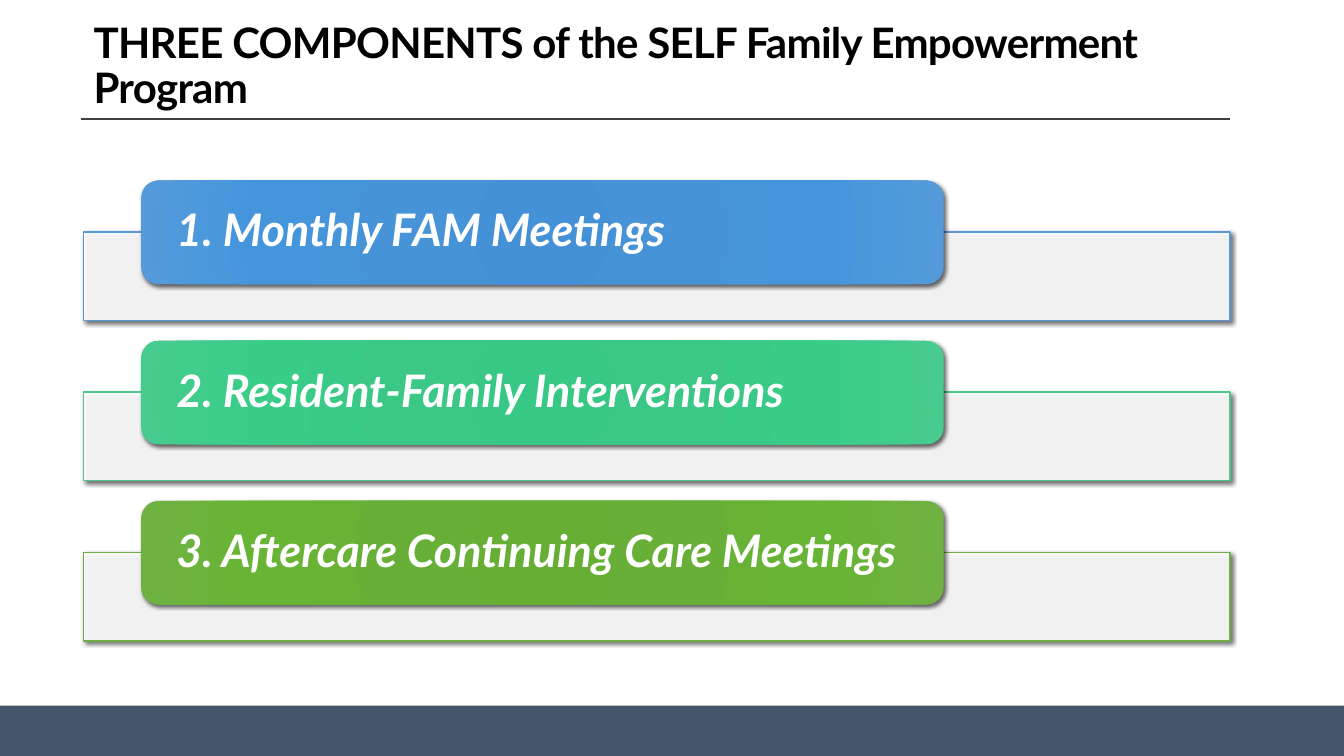
from lxml import etree
from pptx import Presentation
from pptx.dml.color import RGBColor
from pptx.enum.shapes import MSO_CONNECTOR, MSO_SHAPE
from pptx.enum.text import MSO_ANCHOR, PP_ALIGN
from pptx.oxml import parse_xml
from pptx.oxml.ns import qn
from pptx.util import Pt

RECTANGLE = MSO_SHAPE.RECTANGLE
ROUNDED = MSO_SHAPE.ROUNDED_RECTANGLE
STRAIGHT = MSO_CONNECTOR.STRAIGHT
LEFT = PP_ALIGN.LEFT
BOTTOM = MSO_ANCHOR.BOTTOM
MIDDLE = MSO_ANCHOR.MIDDLE
PX = 9144
DRAWING = "http://schemas.openxmlformats.org/drawingml/2006/main"
COLORS = {"black": "000000", "white": "FFFFFF", "rule": "404040", "footer": "44546A"}
COMPONENTS = [
    ("1. Monthly FAM Meetings", "5B9BD5", ["4491D8", "4793D7", "4595DD", "559BDB"]),
    ("2. Resident-Family Interventions", "4DC58D", ["37C885", "3BC786", "39CD88", "47CB8E"]),
    ("3. Aftercare Continuing Care Meetings", "70AD47", ["66AF34", "67AF37", "68B435", "6FB242"]),
]
STOPS = [0, 34, 70, 100]


def add_block(kind, left, top, width, height, fill, shadow=False):
    block = page.shapes.add_shape(kind, left * PX, top * PX, width * PX, height * PX)
    block.fill.solid()
    block.fill.fore_color.rgb = RGBColor.from_string(fill)
    block.line.fill.background()
    block.shadow.inherit = False
    if shadow:
        effects = block._element.spPr.find(qn("a:effectLst"))
        effects.append(parse_xml(
            f'<a:outerShdw xmlns:a="{DRAWING}" blurRad="{Pt(3)}" dist="{Pt(2)}" dir="2700000" '
            f'algn="ctr" rotWithShape="0"><a:srgbClr val="{COLORS["black"]}">'
            '<a:alpha val="60000"/></a:srgbClr></a:outerShdw>'))
    return block


def write_text(box, text, size, color, anchor, inset_x, inset_y):
    frame = box.text_frame
    frame.word_wrap = True
    frame.vertical_anchor = anchor
    frame.margin_left = frame.margin_right = inset_x * PX
    frame.margin_top = frame.margin_bottom = inset_y * PX
    para = frame.paragraphs[0]
    para.alignment = LEFT
    para.line_spacing = 0.9
    span = para.add_run()
    span.text = text
    span.font.name = "Lato"
    span.font.size = Pt(size)
    span.font.bold = True
    span.font.color.rgb = RGBColor.from_string(color)
    return span


deck = Presentation()
deck.slide_width = 1333 * PX
deck.slide_height = 750 * PX
page = deck.slides.add_slide(deck.slide_layouts[6])

add_block(RECTANGLE, 0, 700, 1333, 50, COLORS["footer"])

rule = page.shapes.add_connector(STRAIGHT, 80 * PX, 118 * PX, 1220 * PX, 118 * PX)
rule.line.color.rgb = RGBColor.from_string(COLORS["rule"])
rule.line.width = Pt(1)
etree.SubElement(rule._element.spPr, qn("a:effectLst"))

title = page.shapes.add_textbox(83 * PX, 31 * PX, 1137 * PX, 86 * PX)
heading = write_text(title, "THREE COMPONENTS of the SELF Family Empowerment Program",
                     30, COLORS["black"], BOTTOM, 10, 5)
heading.font._element.set("spc", "-50")

for index, (name, outline, shades) in enumerate(COMPONENTS):
    top = 179 + index * 159
    panel = add_block(RECTANGLE, 83, top + 51, 1137, 88, COLORS["white"], shadow=True)
    panel.line.color.rgb = RGBColor.from_string(outline)
    panel.line.width = Pt(1)
    tint = panel._element.spPr.find(qn("a:solidFill")).find(qn("a:srgbClr"))
    etree.SubElement(tint, qn("a:alpha"), val="90000")

    label = add_block(ROUNDED, 140, top, 796, 103, shades[0], shadow=True)
    stops = "".join(f'<a:gs pos="{stop * 1000}"><a:srgbClr val="{shade}"/></a:gs>'
                    for stop, shade in zip(STOPS, shades))
    gradient = parse_xml(
        f'<a:gradFill xmlns:a="{DRAWING}" rotWithShape="1"><a:gsLst>{stops}</a:gsLst>'
        '<a:path path="circle"><a:fillToRect l="100000" t="100000" r="100000" b="100000"/>'
        '</a:path></a:gradFill>')
    properties = label._element.spPr
    properties.replace(properties.find(qn("a:solidFill")), gradient)
    span = write_text(label, name, 32, COLORS["white"], MIDDLE, 30, 0)
    span.font.italic = True

deck.save("out.pptx")
